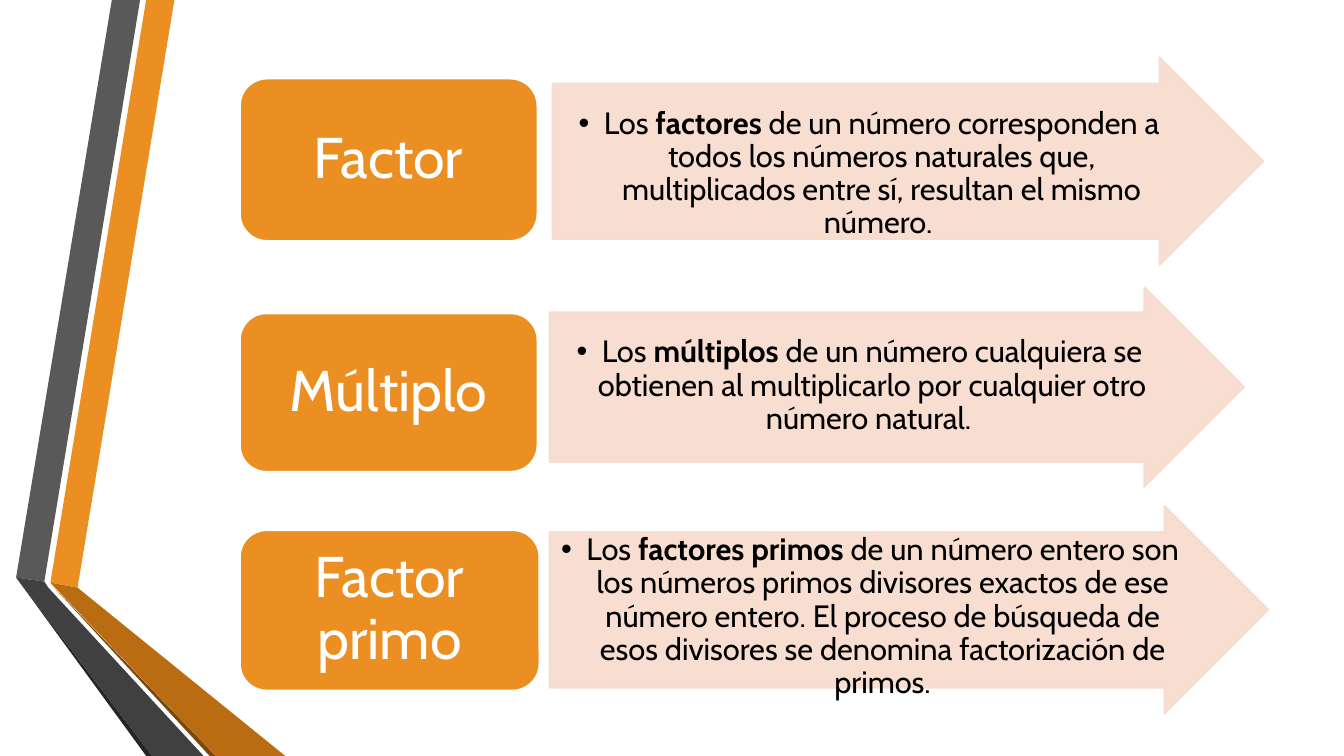
from lxml.etree import SubElement
from pptx import Presentation
from pptx.dml.color import RGBColor
from pptx.enum.shapes import MSO_SHAPE
from pptx.enum.text import MSO_ANCHOR, PP_ALIGN
from pptx.oxml.ns import qn
from pptx.util import Inches, Pt

CELL = Inches(0.01)
COLS, ROWS = 1333, 750
LABEL_COL = 238
ORANGE, PEACH, WHITE, BLACK = "EB8F22", "F7DBCD", "FFFFFF", "000000"

RIBBONS = [
    (ORANGE, [(50, 578), (77, 583), (173, 0), (145, 0)]),
    ("595959", [(139, 0), (111, 0), (16, 573), (44, 577)]),
    ("262626", [(16, 573), (145, ROWS), (151, ROWS)]),
    ("7B480B", [(50, 579), (208, ROWS), (214, ROWS)]),
    ("B96C11", [(50, 578), (214, ROWS), (283, ROWS), (77, 583)]),
    ("404040", [(202, ROWS), (48, 583), (44, 577), (16, 573), (151, ROWS)]),
]

CONCEPTS = [
    ("Factor", (78, 295, 161), (548, 57, 705, 206), 24,
     ("Los ", "factores", " de un número corresponden a todos los números "
      "naturales que, multiplicados entre sí, resultan el mismo número. ")),
    ("Múltiplo", (311, 295, 157), (545, 285, 689, 198), 24,
     ("Los ", "múltiplos", " de un número cualquiera se obtienen al "
      "multiplicarlo por cualquier otro número natural. ")),
    ("Factor primo", (526, 297, 159), (545, 502, 713, 206), 2,
     ("Los ", "factores primos", " de un número entero son los números "
      "primos divisores exactos de ese número entero. El proceso de búsqueda "
      "de esos divisores se denomina factorización de primos.")),
]


def paint(color_format, color, alpha=None):
    color_format.rgb = RGBColor.from_string(color)
    if alpha:
        srgb = color_format._xFill.find(qn("a:srgbClr"))
        SubElement(srgb, qn("a:alpha")).set("val", str(alpha * 1000))


def style(s, fill, line=None, alpha=None):
    s.shadow.inherit = False
    s.fill.solid()
    paint(s.fill.fore_color, fill, alpha)
    if line:
        s.line.width = Pt(1.25)
        s.line.fill.solid()
        paint(s.line.fill.fore_color, line, alpha)
    else:
        s.line.fill.background()


def add_ribbon(shapes, color, points):
    builder = shapes.build_freeform(*points[0], scale=CELL)
    builder.add_line_segments(points[1:], close=True)
    style(builder.convert_to_shape(), color)


def add_block(shapes, preset, box, fill, line, alpha=None):
    s = shapes.add_shape(preset, *(CELL * n for n in box))
    style(s, fill, line, alpha)
    return s


def add_bullet(p, indent):
    pPr = p._p.get_or_add_pPr()
    pPr.set("marL", str(indent))
    pPr.set("indent", str(-indent))
    SubElement(pPr, qn("a:buFont")).set("typeface", "Arial")
    SubElement(pPr, qn("a:buChar")).set("char", "•")


def write(s, parts, size, color, insets, anchor, bullet=False):
    tf = s.text_frame
    tf.word_wrap = True
    tf.vertical_anchor = anchor
    tf.margin_left, tf.margin_top, tf.margin_right, tf.margin_bottom = (
        CELL * n for n in insets)
    p = tf.paragraphs[0]
    p.alignment = PP_ALIGN.CENTER
    p.line_spacing = 0.9
    if bullet:
        add_bullet(p, CELL * 25)
    for i, text in enumerate(parts):
        r = p.add_run()
        r.text = text
        r.font.name = "Cabin"
        r.font.size = Pt(size)
        r.font.bold = i == 1
        paint(r.font.color, color)


def add_concept(shapes, name, label_box, arrow_box, top_inset, definition):
    arrow = add_block(shapes, MSO_SHAPE.RIGHT_ARROW, arrow_box,
                      PEACH, PEACH, alpha=90)
    arrow.adjustments[0] = 0.75
    write(arrow, definition, size=22, color=BLACK,
          insets=(2, top_inset, 2, 2), anchor=MSO_ANCHOR.TOP, bullet=True)
    label = add_block(shapes, MSO_SHAPE.ROUNDED_RECTANGLE,
                      (LABEL_COL, *label_box), ORANGE, WHITE)
    write(label, [name], size=41, color=WHITE,
          insets=(17, 9, 17, 9), anchor=MSO_ANCHOR.MIDDLE)


def main():
    prs = Presentation()
    prs.slide_width, prs.slide_height = CELL * COLS, CELL * ROWS
    shapes = prs.slides.add_slide(prs.slide_layouts[6]).shapes
    for color, points in RIBBONS:
        add_ribbon(shapes, color, points)
    for concept in CONCEPTS:
        add_concept(shapes, *concept)
    prs.save("out.pptx")


if __name__ == "__main__":
    main()
